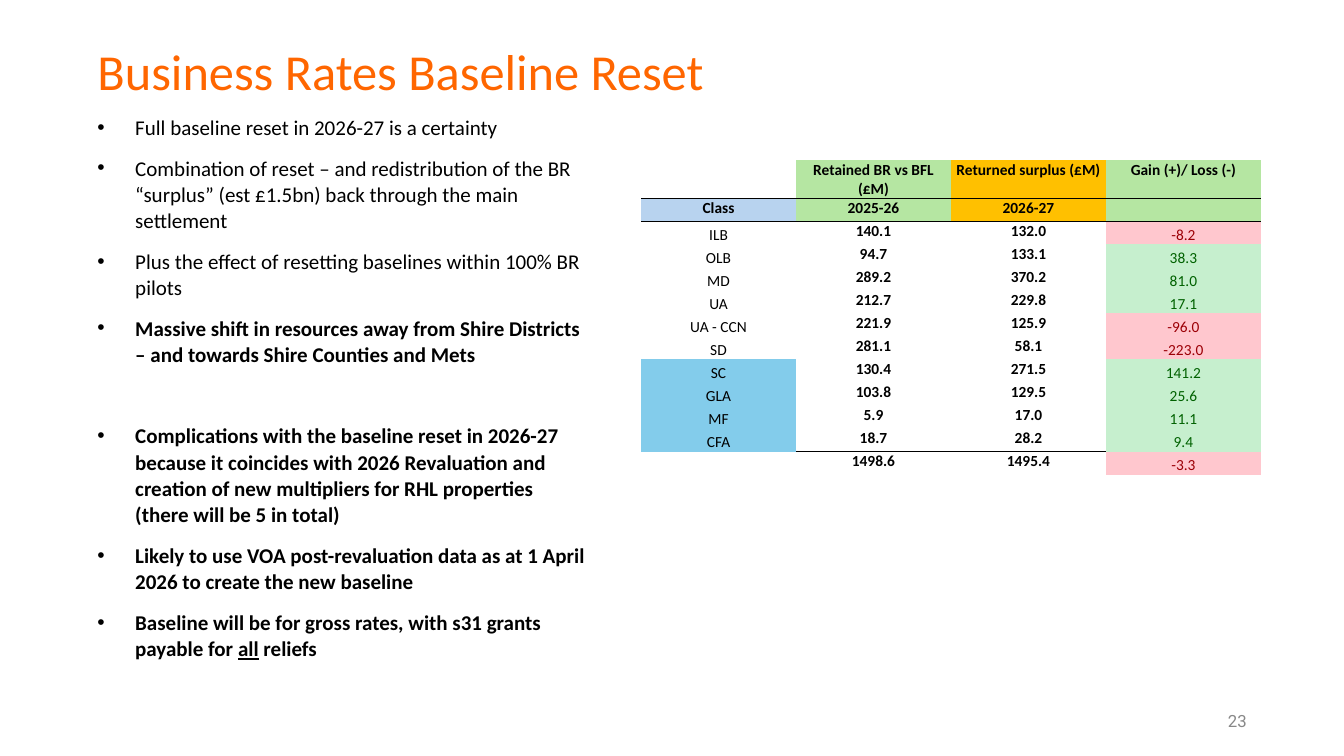
from lxml.etree import SubElement
from pptx import Presentation
from pptx.dml.color import RGBColor
from pptx.enum.text import MSO_ANCHOR as Anchor, PP_ALIGN as Align
from pptx.oxml.ns import qn
from pptx.util import Pt

COLOURS = {
    "title": "FF6600", "text": "000000", "page": "888888",
    "green": "B5E6A2", "amber": "FFC000", "blue": "B8D3EF",
    "sky": "83CCEB", "white": "FFFFFF",
    "gain": "C6EFCE", "gain_text": "006100",
    "loss": "FFC7CE", "loss_text": "9C0006",
}
NO_GRID_STYLE = "{2D5ABB26-0587-4C30-8999-92F81FD0307C}"

BULLETS = [
    (["Full baseline reset in 2026-27 is a certainty"], False, 0),
    (["Combination of reset – and redistribution of the BR “surplus” "
      "(est £1.5bn) back through the main settlement"], False, 10),
    (["Plus the effect of resetting baselines within 100% BR pilots"], False, 10),
    (["Massive shift in resources away from Shire Districts – and towards "
      "Shire Counties and Mets"], True, 10),
    (["Complications with the baseline reset in 2026-27 because it coincides "
      "with 2026 Revaluation and creation of new multipliers for RHL properties "
      "(there will be 5 in total)"], True, 39),
    (["Likely to use VOA post-revaluation data as at 1 April 2026 to create "
      "the new baseline"], True, 10),
    (["Baseline will be for gross rates, with s31 grants payable for ",
      "all", " reliefs"], True, 10),
]

HEADINGS = [
    ["", "Retained BR vs BFL (£M)", "Returned surplus (£M)", "Gain (+)/ Loss (-)"],
    ["Class", "2025-26", "2026-27", ""],
]
HEADING_FILLS = [[None, "green", "amber", "green"], ["blue", "green", "amber", "green"]]
CLASSES = [
    ["ILB", "140.1", "132.0", "-8.2"],
    ["OLB", "94.7", "133.1", "38.3"],
    ["MD", "289.2", "370.2", "81.0"],
    ["UA", "212.7", "229.8", "17.1"],
    ["UA - CCN", "221.9", "125.9", "-96.0"],
    ["SD", "281.1", "58.1", "-223.0"],
    ["SC", "130.4", "271.5", "141.2"],
    ["GLA", "103.8", "129.5", "25.6"],
    ["MF", "5.9", "17.0", "11.1"],
    ["CFA", "18.7", "28.2", "9.4"],
    ["", "1498.6", "1495.4", "-3.3"],
]
UPPER_TIER = {"SC", "GLA", "MF", "CFA"}


class SlideBuilder:
    font = "Calibri"

    def __init__(self, slide):
        self.slide = slide

    def style(self, para, size, colour="text", bold=False, font=None):
        para.font.name = font or self.font
        para.font.size = Pt(size)
        para.font.bold = bold
        para.font.color.rgb = RGBColor.from_string(COLOURS[colour])

    def frame(self, left, top, width, height, anchor=Anchor.TOP):
        box = self.slide.shapes.add_textbox(Pt(left), Pt(top), Pt(width), Pt(height))
        frame = box.text_frame
        frame.word_wrap = True
        frame.vertical_anchor = anchor
        frame.margin_left = frame.margin_right = Pt(3.6)
        frame.margin_top = frame.margin_bottom = Pt(3.6)
        return frame

    def label(self, text, place, size, colour, font=None, align=Align.LEFT):
        para = self.frame(*place, Anchor.MIDDLE).paragraphs[0]
        para.text = text
        para.alignment = align
        self.style(para, size, colour, font=font)
        return para

    def bullets(self, items, place):
        frame = self.frame(*place)
        for index, (spans, bold, gap) in enumerate(items):
            para = frame.add_paragraph() if index else frame.paragraphs[0]
            properties = para._p.get_or_add_pPr()
            properties.set("marL", str(Pt(27)))
            properties.set("indent", str(-Pt(27)))
            SubElement(properties, qn("a:buFont")).set("typeface", "Arial")
            SubElement(properties, qn("a:buChar")).set("char", "•")
            para.line_spacing = 1.05
            para.space_before = Pt(gap)
            self.style(para, 15, bold=bold)
            for position, text in enumerate(spans):
                span = para.add_run()
                span.text = text
                if position % 2:
                    span.font.underline = True

    def underline_cell(self, cell):
        line = SubElement(cell._tc.get_or_add_tcPr(), qn("a:lnB"), w=str(Pt(0.5)))
        fill = SubElement(line, qn("a:solidFill"))
        SubElement(fill, qn("a:srgbClr")).set("val", COLOURS["text"])

    def cell(self, cell, text, fill, colour="text", bold=True, anchor=Anchor.TOP, ruled=False):
        cell.margin_left = cell.margin_right = cell.margin_top = cell.margin_bottom = 0
        cell.vertical_anchor = anchor
        if ruled:
            self.underline_cell(cell)
        if fill:
            cell.fill.solid()
            cell.fill.fore_color.rgb = RGBColor.from_string(COLOURS[fill])
        else:
            cell.fill.background()
        para = cell.text_frame.paragraphs[0]
        para.alignment = Align.CENTER
        self.style(para, 11, colour, bold)
        if text:
            para.add_run().text = text
        else:
            SubElement(para._p, qn("a:endParaRPr")).set("sz", "1100")

    def table(self, rows, columns, left, top, column_width, heights):
        holder = self.slide.shapes.add_table(
            rows, columns, Pt(left), Pt(top), Pt(column_width * columns), Pt(sum(heights)))
        table = holder.table
        table.first_row = table.horz_banding = False
        for style_id in holder.element.iter(qn("a:tableStyleId")):
            style_id.text = NO_GRID_STYLE
        for column in table.columns:
            column.width = Pt(column_width)
        for row, height in zip(table.rows, heights):
            row.height = Pt(height)
        return table

    def rates_table(self, left, top):
        count = len(HEADINGS) + len(CLASSES)
        table = self.table(count, 4, left, top, 110.7, [27.2] + [16.45] * (count - 1))
        for row, (texts, fills) in enumerate(zip(HEADINGS, HEADING_FILLS)):
            for column, (text, fill) in enumerate(zip(texts, fills)):
                self.cell(table.cell(row, column), text, fill, ruled=True)
        for row, (name, *amounts, change) in enumerate(CLASSES, len(HEADINGS)):
            name_fill = "sky" if name in UPPER_TIER else "white" if name else None
            result = "loss" if change.startswith("-") else "gain"
            self.cell(table.cell(row, 0), name, name_fill, bold=False, anchor=Anchor.BOTTOM)
            for column, amount in enumerate(amounts, 1):
                self.cell(table.cell(row, column), amount, None, ruled=row == count - 2)
            self.cell(table.cell(row, 3), change, result, result + "_text", False,
                      Anchor.BOTTOM)


def main():
    deck = Presentation()
    deck.slide_width, deck.slide_height = Pt(960), Pt(540)
    builder = SlideBuilder(deck.slides.add_slide(deck.slide_layouts[6]))
    title = builder.label("Business Rates Baseline Reset", (66, 29.5, 863.3, 47.5), 36, "title")
    title.line_spacing = 0.9
    builder.bullets(BULLETS, (66, 77.4, 359.3, 423.4))
    builder.label("23", (864.2, 505.4, 30, 19.4), 12, "page", "Roboto", Align.RIGHT)
    builder.rates_table(457.9, 114.5)
    deck.save("out.pptx")


if __name__ == "__main__":
    main()
